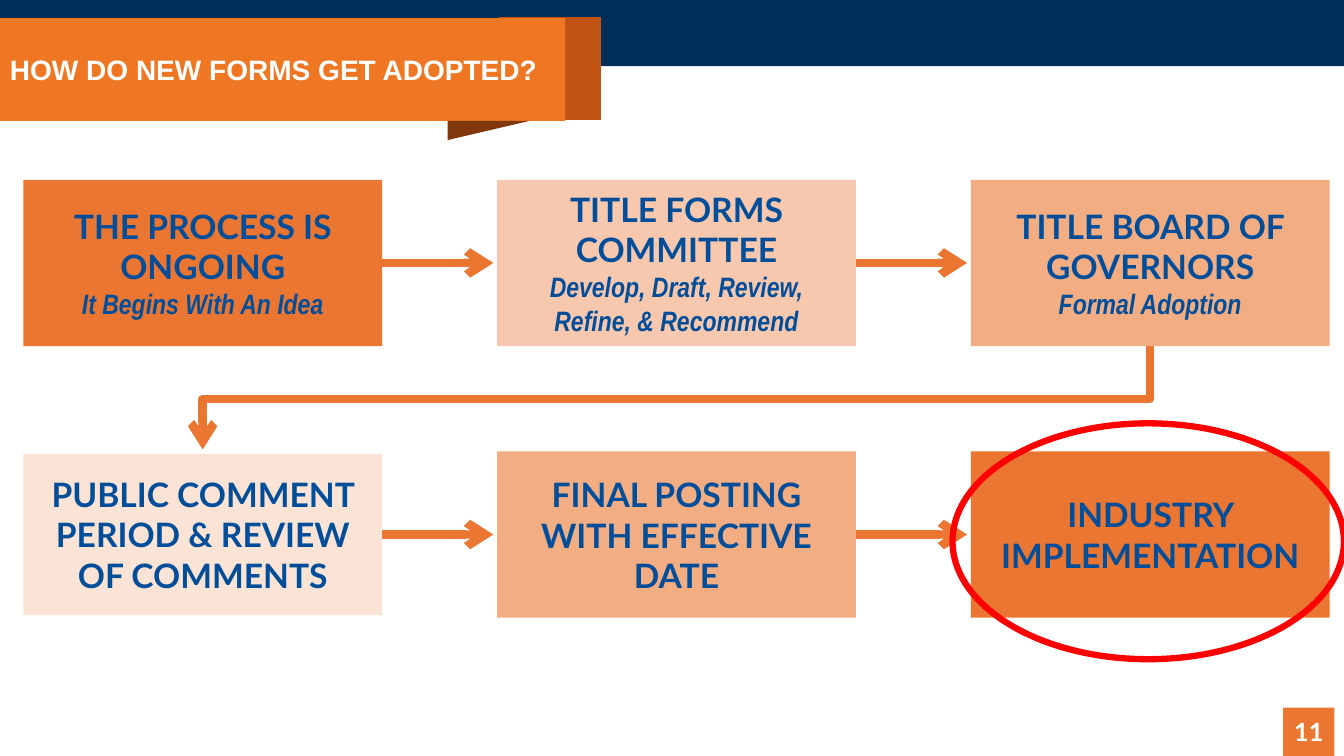
"""Build the slide on how new forms get adopted."""
from lxml.etree import SubElement
from pptx import Presentation
from pptx.dml.color import RGBColor
from pptx.enum.shapes import MSO_CONNECTOR, MSO_SHAPE
from pptx.enum.text import MSO_ANCHOR, PP_ALIGN
from pptx.oxml.ns import qn
from pptx.util import Pt

COLORS = {
    "orange": "EB7631", "apricot": "F3AD83", "peach": "F7C8AD", "cream": "FBE4D6",
    "navy": "002E5B", "ribbon": "EF7622", "fold": "C25413", "shade": "81380D",
    "text": "004E9A", "white": "FFFFFF", "red": "FF0000",
}
LEFT, PITCH = 16.6, 338.4
BOX_WIDTH, BOX_HEIGHT = 256.4, 118.8
ROW_CENTERS = (187.8, 381.8)
ARROW_GAP = 2.6

STEPS = [
    (0, 0, BOX_HEIGHT, "orange", "THE PROCESS IS ONGOING", "It Begins With An Idea"),
    (0, 1, BOX_HEIGHT, "peach", "TITLE FORMS COMMITTEE", "Develop, Draft, Review, Refine, & Recommend"),
    (0, 2, BOX_HEIGHT, "apricot", "TITLE BOARD OF GOVERNORS", "Formal Adoption"),
    (1, 0, 115.2, "cream", "PUBLIC COMMENT PERIOD & REVIEW OF COMMENTS", None),
    (1, 1, BOX_HEIGHT, "apricot", "FINAL POSTING WITH EFFECTIVE DATE", None),
    (1, 2, BOX_HEIGHT, "orange", "INDUSTRY IMPLEMENTATION", None),
]


def color(name):
    return RGBColor.from_string(COLORS[name])


def paint(shape, fill):
    shape.shadow.inherit = False
    shape.fill.solid()
    shape.fill.fore_color.rgb = color(fill)
    shape.line.fill.background()


def add_block(page, left, top, width, height, fill):
    block = page.shapes.add_shape(MSO_SHAPE.RECTANGLE, Pt(left), Pt(top), Pt(width), Pt(height))
    paint(block, fill)
    return block


def write(para, text, size, font, fill, italic=False, align=PP_ALIGN.CENTER):
    para.text = text
    para.alignment = align
    for span in para.runs:
        span.font.size = Pt(size)
        span.font.name = font
        span.font.bold = True
        span.font.italic = italic
        span.font.color.rgb = color(fill)


def add_step(page, row, column, height, fill, title, detail):
    top = ROW_CENTERS[row] - height / 2
    box = add_block(page, LEFT + column * PITCH, top, BOX_WIDTH, height, fill)
    frame = box.text_frame
    frame.word_wrap = True
    frame.vertical_anchor = MSO_ANCHOR.MIDDLE
    frame.margin_left = frame.margin_right = Pt(13.7)
    frame.margin_top = frame.margin_bottom = Pt(13.7)
    write(frame.paragraphs[0], title, 24, "Lato", "text")
    if detail:
        write(frame.add_paragraph(), detail, 20, "Arial Narrow", "text", italic=True)


def style_arrow(shape):
    shape.line.color.rgb = color("orange")
    shape.line.width = Pt(6)
    SubElement(shape.line._get_or_add_ln(), qn("a:tailEnd"), type="arrow")


def add_arrow(page, row, column):
    start = LEFT + column * PITCH + BOX_WIDTH
    end = LEFT + (column + 1) * PITCH - ARROW_GAP
    middle = Pt(ROW_CENTERS[row])
    arrow = page.shapes.add_connector(MSO_CONNECTOR.STRAIGHT, Pt(start), middle, Pt(end), middle)
    style_arrow(arrow)
    SubElement(arrow._element.spPr, qn("a:effectLst"))


def add_outline(page, points, close=True):
    corners = [(Pt(x), Pt(y)) for x, y in points]
    builder = page.shapes.build_freeform(*corners[0])
    builder.add_line_segments(corners[1:], close=close)
    return builder.convert_to_shape()


def add_return_arrow(page):
    first = LEFT + BOX_WIDTH / 2
    last = first + 2 * PITCH
    top = ROW_CENTERS[0] + BOX_HEIGHT / 2
    bottom = ROW_CENTERS[1] - BOX_HEIGHT / 2 - 1.4
    turn = (top + bottom) / 2 + 0.8
    arrow = add_outline(page, [(last, top), (last, turn), (first, turn), (first, bottom)], close=False)
    arrow.shadow.inherit = False
    arrow.fill.background()
    style_arrow(arrow)


def add_header(page):
    add_block(page, 0, 0, 960, 47.2, "navy")
    add_block(page, 356.4, 12.2, 72.8, 73.4, "fold")
    ribbon = add_block(page, 0, 13, 403.7, 73.4, "ribbon")
    frame = ribbon.text_frame
    frame.word_wrap = True
    frame.vertical_anchor = MSO_ANCHOR.MIDDLE
    write(frame.paragraphs[0], "HOW DO NEW FORMS GET ADOPTED?", 20, "Arial", "white", align=PP_ALIGN.LEFT)
    paint(add_outline(page, [(378, 86.4), (319.7, 100.1), (319.7, 86.4)]), "shade")


def add_page_number(page):
    badge = add_block(page, 916.6, 505.4, 36.6, 34.6, "orange")
    frame = badge.text_frame
    frame.word_wrap = False
    frame.vertical_anchor = MSO_ANCHOR.MIDDLE
    write(frame.paragraphs[0], "11", 18, "Lato", "white")


def add_highlight(page):
    ring = page.shapes.add_shape(MSO_SHAPE.OVAL, Pt(680.4), Pt(302.4), Pt(279.6), Pt(168.5))
    ring.shadow.inherit = False
    ring.fill.background()
    ring.line.color.rgb = color("red")
    ring.line.width = Pt(4.5)


def main():
    deck = Presentation()
    deck.slide_width, deck.slide_height = Pt(960), Pt(540)
    page = deck.slides.add_slide(deck.slide_layouts[6])
    add_page_number(page)
    for row in range(2):
        for column in range(2):
            add_arrow(page, row, column)
    add_return_arrow(page)
    for step in STEPS:
        add_step(page, *step)
    add_header(page)
    add_highlight(page)
    deck.save("out.pptx")


if __name__ == "__main__":
    main()
